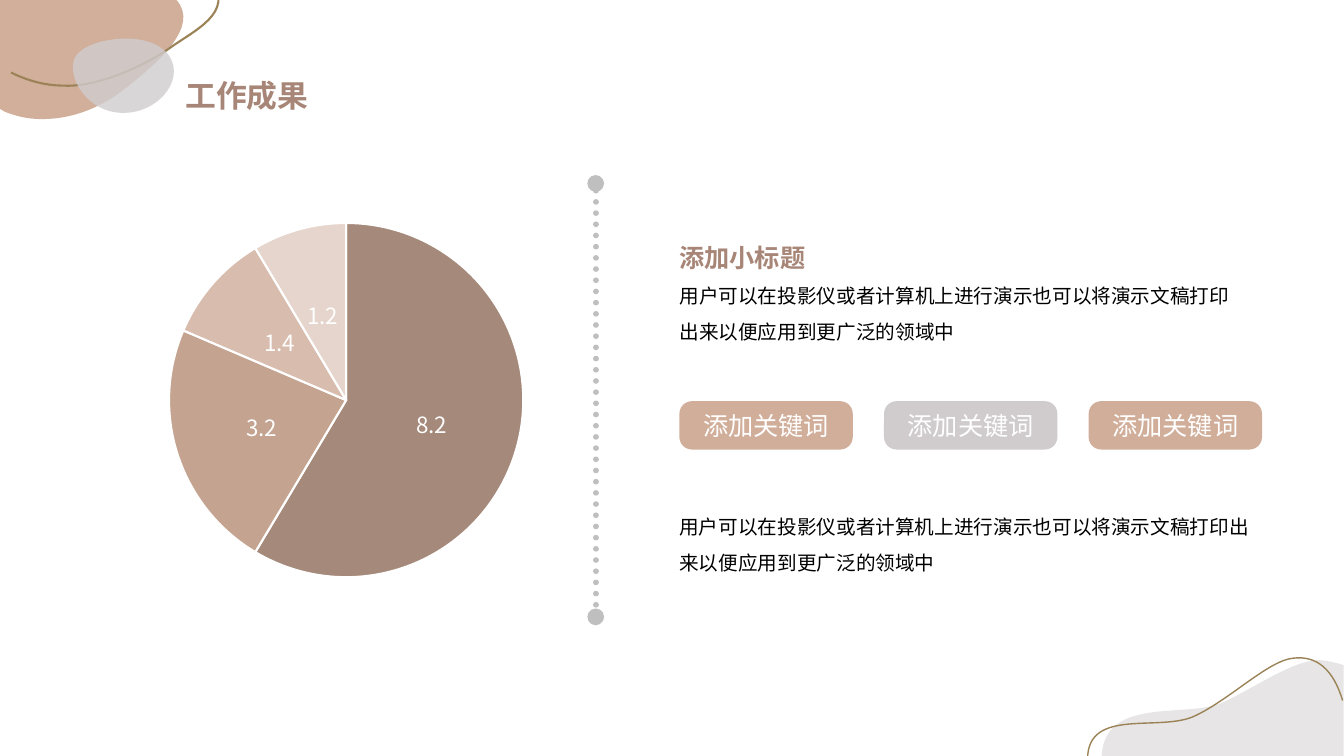
from dataclasses import dataclass

from lxml import etree
from pptx import Presentation
from pptx.chart.data import CategoryChartData
from pptx.dml.color import RGBColor
from pptx.enum.chart import XL_CHART_TYPE, XL_LABEL_POSITION
from pptx.enum.dml import MSO_LINE
from pptx.enum.shapes import MSO_CONNECTOR, MSO_SHAPE
from pptx.enum.text import MSO_ANCHOR, MSO_AUTO_SIZE, PP_ALIGN
from pptx.oxml import parse_xml
from pptx.oxml.ns import nsdecls, qn
from pptx.util import Emu, Inches, Pt

PIE = XL_CHART_TYPE.PIE
LABEL_CENTER = XL_LABEL_POSITION.CENTER
DOTTED = MSO_LINE.ROUND_DOT
STRAIGHT = MSO_CONNECTOR.STRAIGHT
ROUNDED = MSO_SHAPE.ROUNDED_RECTANGLE
TOP, MIDDLE = MSO_ANCHOR.TOP, MSO_ANCHOR.MIDDLE
LEFT, CENTER = PP_ALIGN.LEFT, PP_ALIGN.CENTER
GROW = MSO_AUTO_SIZE.SHAPE_TO_FIT_TEXT

EMU_PER_PX = 9144


@dataclass(frozen=True)
class Theme:
    font: str = "Noto Sans CJK SC"
    heading: str = "A78677"
    body: str = "000000"
    white: str = "FFFFFF"
    tan: str = "D1AE9A"
    grey: str = "D0CCCD"
    gold: str = "9B8357"
    divider: str = "BFBFBF"
    slices: tuple = ("A5897A", "C4A390", "D8BCAD", "E6D5CC")
    title_size: int = 22
    heading_size: int = 18
    label_size: int = 16
    body_size: int = 14


THEME = Theme()
BODY = "用户可以在投影仪或者计算机上进行演示也可以将演示文稿打印出来以便应用到更广泛的领域中"

# Outlines: a start point, then segments of one point (line) or three (cubic curve).
TAN_BLOB = ((47, 118), [((73, 117), (100, 107), (124, 88)), ((162, 58), (196, 26), (176, 1)),
                        ((174, -1),), ((0, -1),), ((0, 108),), ((5, 111),),
                        ((18, 116), (32, 119), (47, 118))])
TOP_STROKE = ((11, 72), [((27, 80), (45, 85), (63, 85)), ((96, 87), (144, 65), (168, 48)),
                         ((193, 30), (233, 13), (210, -20))])
GREY_PEBBLE = ((74, 58), [((66, 77), (87, 113), (124, 112)), ((160, 111), (186, 75), (165, 52)),
                          ((143, 28), (81, 39), (74, 58))])
GREY_HILL = ((227, 5), [((229, 5), (230, 5), (232, 5)), ((239, 6), (246, 7), (254, 10)),
                        ((254, 100),), ((14, 100),), ((17, 40), (99, 63), (134, 47)),
                        ((168, 31), (201, 7), (227, 5))])
HILL_STROKE = ((0, 103), [((0, 51), (73, 77), (107, 60)), ((141, 44), (180, 5), (204, 3)),
                          ((228, 0), (244, 15), (253, 45))])


def px(value):
    return Emu(round(value * EMU_PER_PX))


def color(value):
    return RGBColor.from_string(value)


def outline_bounds(start, segments, axis):
    """Return the least and greatest coordinate the outline reaches on an axis."""
    reached, last = [start[axis]], start[axis]
    for segment in segments:
        values = [point[axis] for point in segment]
        if len(values) == 3:
            a, b, c = values
            for t in (step / 50 for step in range(50)):
                s = 1 - t
                reached.append(s**3 * last + 3 * s * s * t * a + 3 * s * t * t * b + t**3 * c)
        last = values[-1]
        reached.append(last)
    return min(reached), max(reached)


def add_outline(slide, origin, outline, closed):
    """Add a freeform whose three-point segments are true curves, in a tight frame."""
    start, segments = outline
    points = [start] + [point for segment in segments for point in segment]
    placed = [(px(origin[0] + x), px(origin[1] + y)) for x, y in points]
    builder = slide.shapes.build_freeform(*placed[0])
    builder.add_line_segments(placed[1:], close=closed)
    shape = builder.convert_to_shape()
    shape.shadow.inherit = False

    path = next(shape.element.iter(qn("a:path")))
    lines = iter(path.findall(qn("a:lnTo")))
    for segment in segments:
        first = next(lines)
        if len(segment) == 3:
            first.tag = qn("a:cubicBezTo")
            for _ in range(2):
                line = next(lines)
                first.append(line[0])
                path.remove(line)

    (left, right), (top, bottom) = (outline_bounds(start, segments, axis) for axis in (0, 1))
    shape.left, shape.top = px(origin[0] + left), px(origin[1] + top)
    shape.width, shape.height = px(right - left), px(bottom - top)
    path.set("w", str(shape.width))
    path.set("h", str(shape.height))
    for element, (x, y) in zip(path.iter(qn("a:pt")), placed):
        element.set("x", str(x - shape.left))
        element.set("y", str(y - shape.top))
    return shape


def add_blob(slide, origin, outline, fill, opacity):
    shape = add_outline(slide, origin, outline, True)
    shape.fill.solid()
    shape.fill.fore_color.rgb = color(fill)
    shape.line.fill.background()
    fill_color = next(shape.element.spPr.iter(qn("a:srgbClr")))
    etree.SubElement(fill_color, qn("a:alpha"), val=str(opacity * 1000))


def add_stroke(slide, origin, outline, width):
    shape = add_outline(slide, origin, outline, False)
    shape.fill.background()
    shape.line.color.rgb = color(THEME.gold)
    shape.line.width = Pt(width)


def add_run(paragraph, text, size, rgb, bold=False):
    run = paragraph.add_run()
    run.text = text
    run.font.size = Pt(size)
    run.font.bold = bold
    run.font.color.rgb = color(rgb)
    run.font.name = THEME.font
    etree.SubElement(run.font._element, qn("a:ea"), typeface=THEME.font)


def add_text(slide, box, runs, spacing, anchor=MIDDLE):
    """Add a text box with one paragraph for each (text, size, colour, bold)."""
    frame = slide.shapes.add_textbox(*map(px, box)).text_frame
    frame.word_wrap = True
    frame.auto_size = GROW
    frame.vertical_anchor = anchor
    frame.margin_left = frame.margin_top = frame.margin_right = frame.margin_bottom = 0
    for index, run in enumerate(runs):
        paragraph = frame.add_paragraph() if index else frame.paragraphs[0]
        paragraph.alignment = LEFT
        paragraph.line_spacing = spacing
        add_run(paragraph, *run)


def add_top_corner(slide, origin):
    add_blob(slide, origin, TAN_BLOB, THEME.tan, 98)
    add_stroke(slide, origin, TOP_STROKE, 1.5)
    add_blob(slide, origin, GREY_PEBBLE, THEME.grey, 80)


def add_bottom_corner(slide, origin):
    add_blob(slide, origin, GREY_HILL, THEME.grey, 50)
    add_stroke(slide, origin, HILL_STROKE, 1)


def add_pie(slide, box):
    data = CategoryChartData()
    data.categories = ["1", "2", "3", "4"]
    data.add_series("Series 1", (8.2, 3.2, 1.4, 1.2))
    chart = slide.shapes.add_chart(PIE, *map(px, box), data).chart
    chart.has_legend = chart.has_title = False
    chart.font.name = THEME.font
    chart.font.size = Pt(THEME.label_size)
    chart.font.color.rgb = color(THEME.white)
    plot = chart.plots[0]
    plot.vary_by_categories = True
    plot.has_data_labels = True
    plot.data_labels.show_value = True
    plot.data_labels.position = LABEL_CENTER
    for index, rgb in enumerate(THEME.slices):
        slice_format = plot.series[0].points[index].format
        slice_format.fill.solid()
        slice_format.fill.fore_color.rgb = color(rgb)
        slice_format.line.color.rgb = color(THEME.white)
        slice_format.line.width = Pt(1.5)
    plot_area = chart.element.find(".//" + qn("c:plotArea"))
    for layout in plot_area.findall(qn("c:layout")):
        plot_area.remove(layout)
    plot_area.insert(0, parse_xml(
        f'<c:layout {nsdecls("c")}><c:manualLayout><c:layoutTarget val="inner"/>'
        '<c:xMode val="edge"/><c:yMode val="edge"/><c:x val="0.16"/><c:y val="0.04"/>'
        '<c:w val="0.68"/><c:h val="0.92"/></c:manualLayout></c:layout>'))


def add_divider(slide, x, top, bottom):
    connector = slide.shapes.add_connector(STRAIGHT, px(x), px(top), px(x), px(bottom))
    connector.line.color.rgb = color(THEME.divider)
    connector.line.width = Pt(4)
    connector.line.dash_style = DOTTED
    line = connector.line._get_or_add_ln()
    line.set("cap", "rnd")
    for end in ("a:headEnd", "a:tailEnd"):
        etree.SubElement(line, qn(end), type="oval")
    etree.SubElement(connector.element.spPr, qn("a:effectLst"))


def add_keywords(slide, box, fills, width=172):
    left, top, total, height = box
    pitch = (total - width) / (len(fills) - 1)
    for index, fill in enumerate(fills):
        shape = slide.shapes.add_shape(
            ROUNDED, px(left + index * pitch), px(top), px(width), px(height))
        shape.adjustments[0] = 0.26
        shape.shadow.inherit = False
        shape.fill.solid()
        shape.fill.fore_color.rgb = color(fill)
        shape.line.fill.background()
        shape.text_frame.vertical_anchor = MIDDLE
        paragraph = shape.text_frame.paragraphs[0]
        paragraph.alignment = CENTER
        add_run(paragraph, "添加关键词", THEME.heading_size, THEME.white)


def add_details(slide, left, top):
    heading = ("添加小标题", THEME.heading_size, THEME.heading, True)
    body = (BODY, THEME.body_size, THEME.body)
    add_text(slide, (left, top, 555, 116), [heading, body], 1.5)
    add_keywords(slide, (left, top + 173, 578, 48), (THEME.tan, THEME.grey, THEME.tan))
    add_text(slide, (left, top + 276, 577, 67), [body], 1.5)


def main():
    presentation = Presentation()
    presentation.slide_width, presentation.slide_height = Inches(40 / 3), Inches(7.5)
    slide = presentation.slides.add_slide(presentation.slide_layouts[6])
    add_top_corner(slide, (0, 0))
    add_bottom_corner(slide, (1079, 650))
    title = ("工作成果", THEME.title_size, THEME.heading, True)
    add_text(slide, (184, 69, 225, 44), [title], 1.2, TOP)
    add_pie(slide, (81, 206, 525, 382))
    add_details(slide, 674, 225)
    add_divider(slide, 591, 182, 612)
    presentation.save("out.pptx")


if __name__ == "__main__":
    main()
